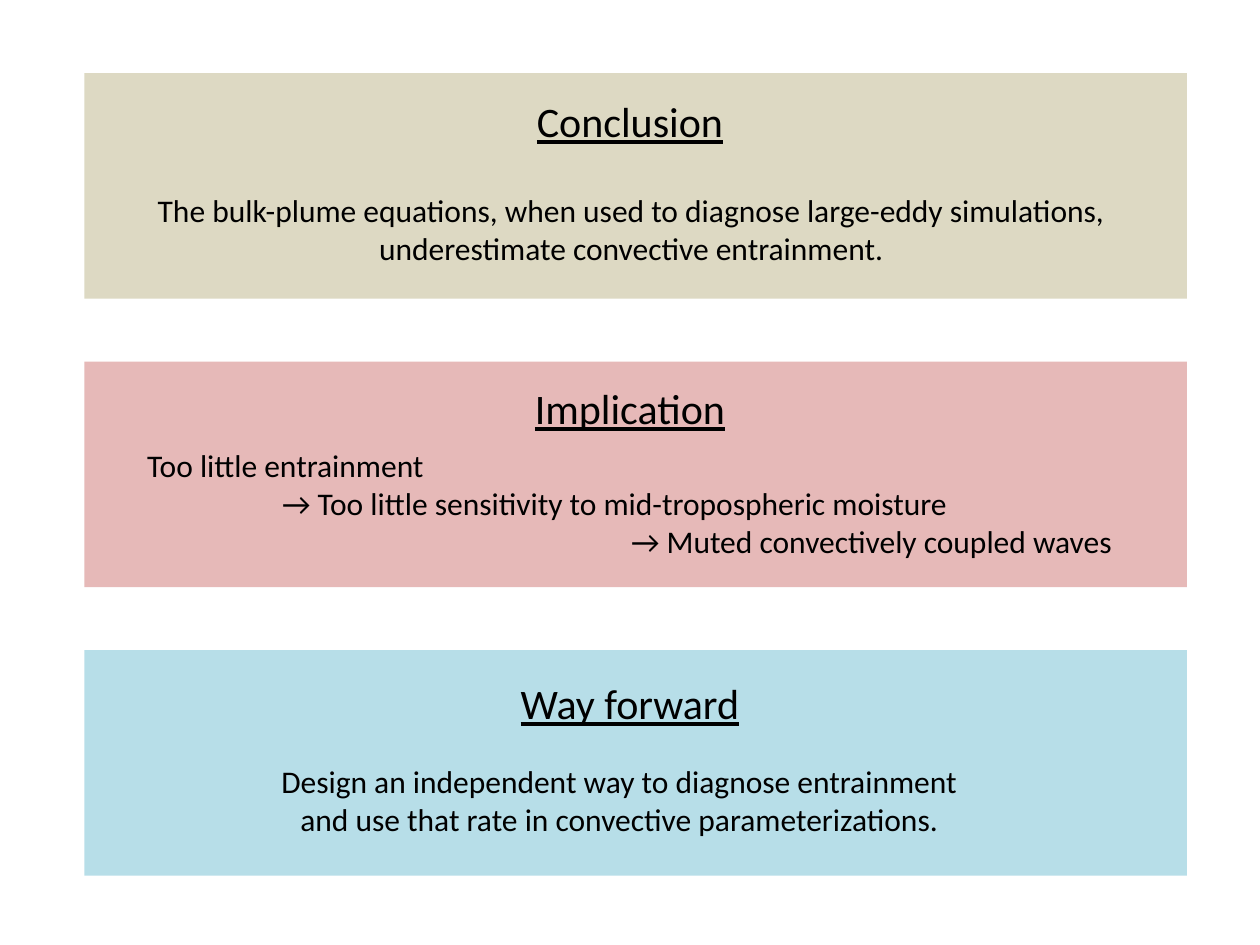
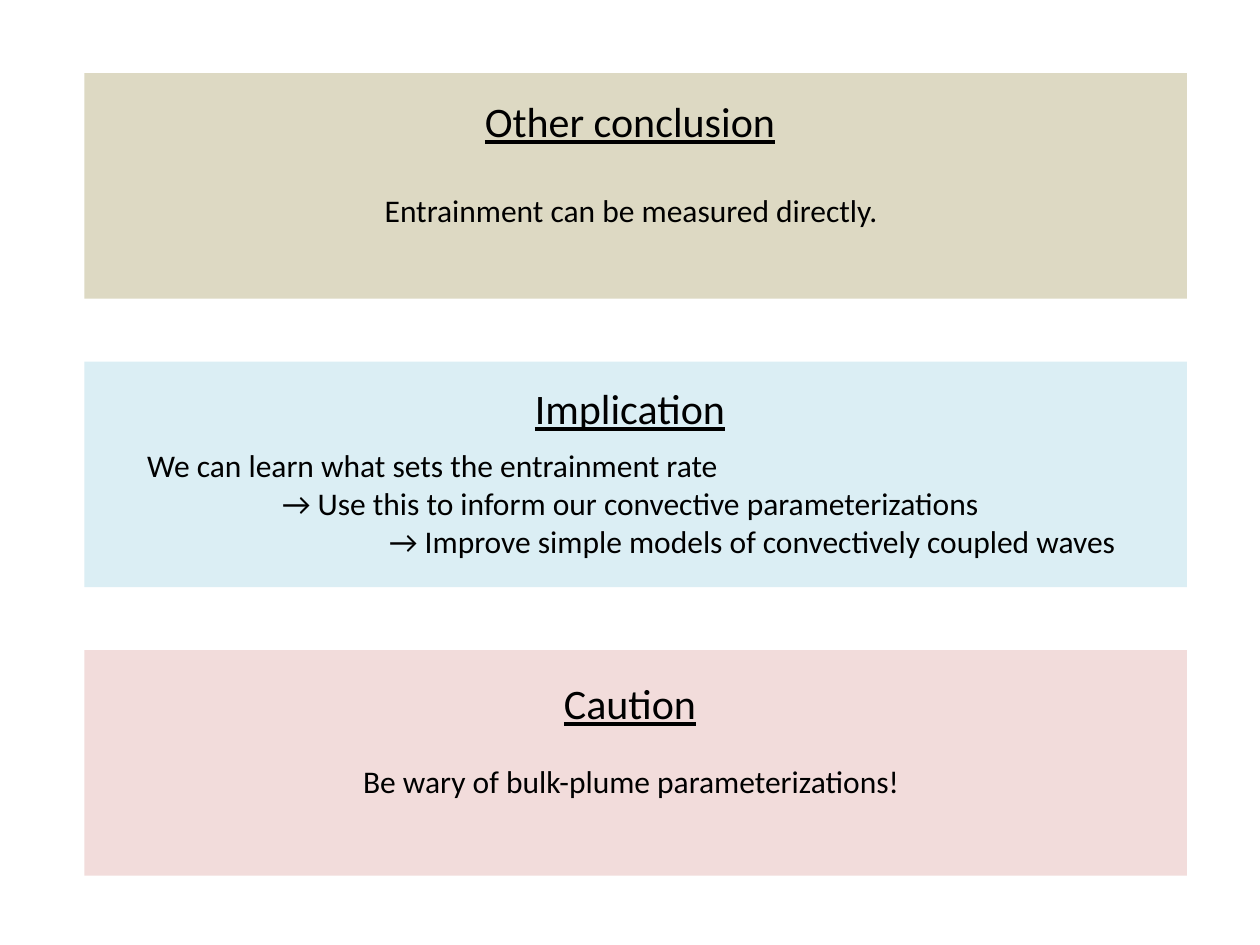
from dataclasses import dataclass

from pptx import Presentation
from pptx import util as u
from pptx.dml import color
from pptx.enum import shapes, text

# The slide is a grid of 100 columns by 75 rows of square cells.
COLUMNS, ROWS = 100, 75
CELL = u.Inches(0.1)

COLORS = {
    "text": "000000",
    "sand": "DDD9C3",
    "rose": "E6B9B8",
    "sky": "B7DEE8",
    "pale rose": "F2DCDB",
    "pale sky": "DBEEF4",
}
FONT = "Calibri"
TITLE_SIZE, BODY_SIZE = 24, 18

PANEL_LEFT, PANEL_TOP = 6.7, 5.8
PANEL_WIDTH, PANEL_HEIGHT = 87.5, 17.9
PANEL_PITCH = 22.9
TITLE_HEIGHT = 5
BODY_MARGIN = 4


@dataclass
class Box:
    left: float
    top: float
    width: float
    height: float

    def inside(self, left, top, width, height):
        """Return a box whose offset is measured from this one's corner."""
        return Box(self.left + left, self.top + top, width, height)

    def lengths(self):
        return [round(cells * CELL)
                for cells in (self.left, self.top, self.width, self.height)]


@dataclass
class Panel:
    title: str
    fill: str
    lines: tuple
    indents: tuple = ()  # one per line, in columns; centred when empty
    body_width: float = 78.8


@dataclass
class Band:
    """Rows of the title and the body, counted from the top of a panel."""
    title_top: float
    body_top: float
    body_height: float


BANDS = (Band(1.3, 8.9, 7.1), Band(1.2, 6.2, 10.1), Band(1.7, 8.4, 7.1))

SLIDES = (
    (
        Panel("Conclusion", "sand",
              ("The bulk-plume equations, when used to diagnose large-eddy "
               "simulations, underestimate convective entrainment.",)),
        Panel("Implication", "rose",
              ("Too little entrainment",
               "→ Too little sensitivity to mid-tropospheric moisture",
               "→ Muted convectively coupled waves"),
              indents=(0, 10.7, 38.4), body_width=80),
        Panel("Way forward", "sky",
              ("Design an independent way to diagnose entrainment",
               "and use that rate in convective parameterizations."),
              body_width=76.9),
    ),
    (
        Panel("Other conclusion", "sand",
              ("Entrainment can be measured directly.",)),
        Panel("Implication", "pale sky",
              ("We can learn what sets the entrainment rate",
               "→ Use this to inform our convective parameterizations",
               "→ Improve simple models of convectively coupled waves"),
              indents=(0, 10.7, 19.2), body_width=80),
        Panel("Caution", "pale rose",
              ("Be wary of bulk-plume parameterizations!",)),
    ),
)


def add_text(slide, box, lines, size, underline=False, indents=()):
    text_frame = slide.shapes.add_textbox(*box.lengths()).text_frame
    text_frame.word_wrap = True
    text_frame.text = "\n".join(lines)
    for index, paragraph in enumerate(text_frame.paragraphs):
        if indents:
            paragraph.alignment = text.PP_ALIGN.LEFT
            properties = paragraph._p.get_or_add_pPr()
            properties.set("marL", str(round(indents[index] * CELL)))
            properties.set("indent", "0")
        else:
            paragraph.alignment = text.PP_ALIGN.CENTER
        for run in paragraph.runs:
            run.font.name = FONT
            run.font.size = u.Pt(size)
            run.font.underline = underline
            run.font.color.rgb = color.RGBColor.from_string(COLORS["text"])


def add_panel(slide, box, panel, band):
    shape = slide.shapes.add_shape(
        shapes.MSO_SHAPE.RECTANGLE, *box.lengths())
    shape.shadow.inherit = False
    shape.fill.solid()
    shape.fill.fore_color.rgb = color.RGBColor.from_string(COLORS[panel.fill])
    shape.line.fill.background()

    title_box = box.inside(-box.left, band.title_top, COLUMNS, TITLE_HEIGHT)
    add_text(slide, title_box, [panel.title], TITLE_SIZE, underline=True)
    body_box = box.inside(BODY_MARGIN, band.body_top,
                          panel.body_width, band.body_height)
    add_text(slide, body_box, panel.lines, BODY_SIZE, indents=panel.indents)


def add_panel_slide(presentation, panels):
    slide = presentation.slides.add_slide(presentation.slide_layouts[6])
    for index, (panel, band) in enumerate(zip(panels, BANDS)):
        box = Box(PANEL_LEFT, PANEL_TOP + index * PANEL_PITCH,
                  PANEL_WIDTH, PANEL_HEIGHT)
        add_panel(slide, box, panel, band)


def main():
    presentation = Presentation()
    presentation.slide_width = COLUMNS * CELL
    presentation.slide_height = ROWS * CELL
    for panels in SLIDES:
        add_panel_slide(presentation, panels)
    presentation.save("out.pptx")


if __name__ == "__main__":
    main()
